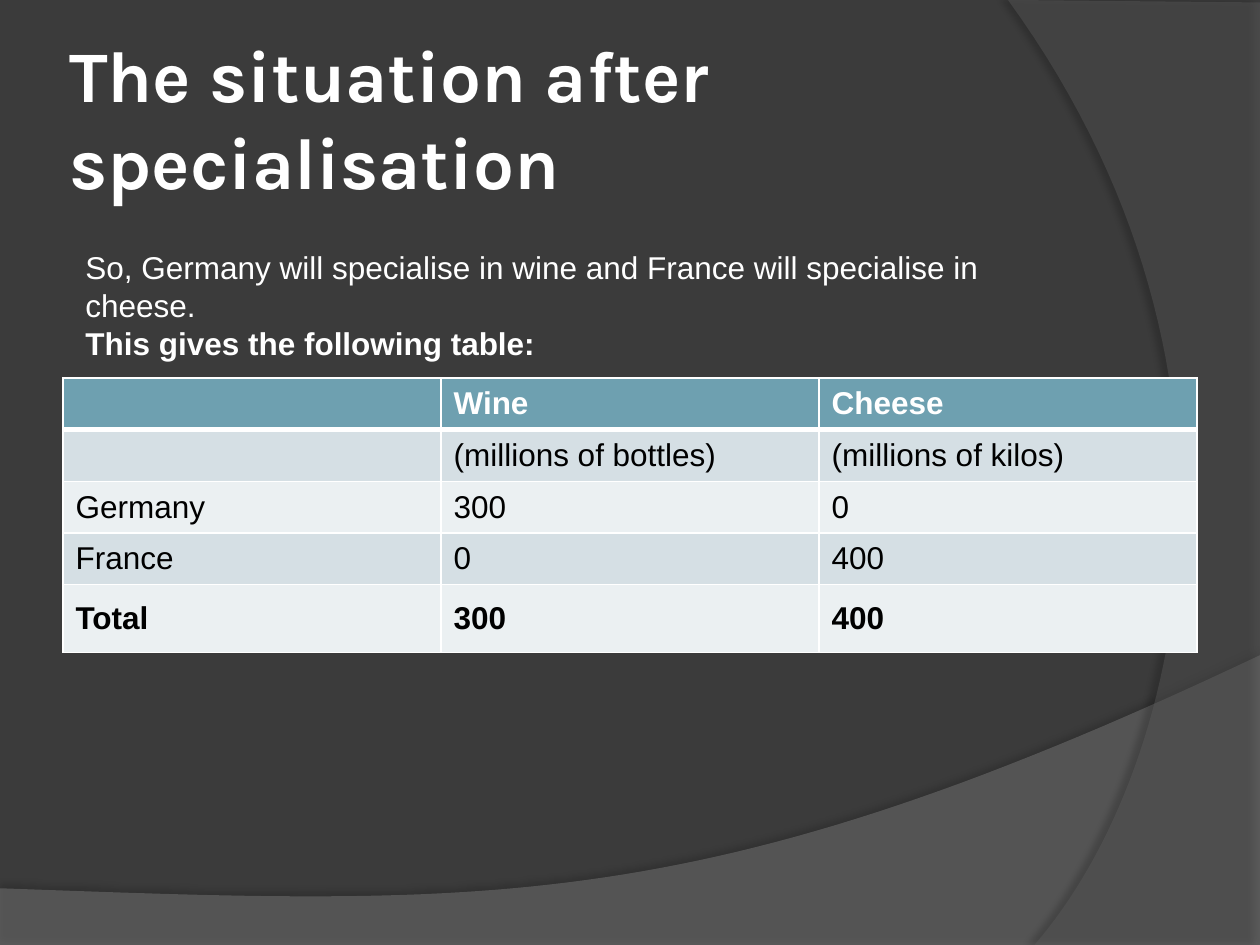
from lxml import etree
from pptx import Presentation
from pptx.dml.color import RGBColor
from pptx.enum.text import MSO_ANCHOR
from pptx.oxml.ns import qn
from pptx.util import Inches, Pt

MIDDLE = MSO_ANCHOR.MIDDLE
TOP = MSO_ANCHOR.TOP
COLORS = {
    "background": "3B3B3B",
    "lower_wave": "7F7F7F",
    "right_wave": "5E5E5E",
    "shadow": "000000",
    "light": "FFFFFF",
    "dark": "000000",
    "header": "6EA0B0",
    "band_odd": "D5DFE4",
    "band_even": "EBF0F2",
}
TRADE_ROWS = [
    ("", "Wine", "Cheese"),
    ("", "(millions of bottles)", "(millions of kilos)"),
    ("Germany", "300", "0"),
    ("France", "0", "400"),
    ("Total", "300", "400"),
]
ROW_HEIGHTS = [0.41, 0.41, 0.41, 0.41, 0.54]
CURVE_STEPS = 60


def rgb(name):
    return RGBColor.from_string(COLORS[name])


def add_color(parent, name, opacity=100):
    color = etree.SubElement(parent, qn("a:srgbClr"), val=COLORS[name])
    if opacity < 100:
        etree.SubElement(color, qn("a:alpha"), val=str(opacity * 1000))


def curve(start, control_1, control_2, end):
    points = []
    for step in range(CURVE_STEPS + 1):
        t = step / CURVE_STEPS
        weights = ((1 - t) ** 3, 3 * t * (1 - t) ** 2, 3 * t * t * (1 - t), t ** 3)
        points.append(tuple(
            sum(weight * value for weight, value in zip(weights, axis))
            for axis in zip(start, control_1, control_2, end)
        ))
    return points


def add_wave(slide, outline, color, opacity, shadow_opacity, distance, direction):
    points = [(Inches(x), Inches(y)) for x, y in outline]
    builder = slide.shapes.build_freeform(*points[0])
    builder.add_line_segments(points[1:], close=True)
    wave = builder.convert_to_shape()
    wave.fill.solid()
    wave.fill.fore_color.rgb = rgb(color)
    fill_color = wave.fill._xPr.find(qn("a:solidFill")).find(qn("a:srgbClr"))
    etree.SubElement(fill_color, qn("a:alpha"), val=str(opacity * 1000))
    wave.line.fill.background()
    wave.shadow.inherit = False
    effects = wave._element.spPr.find(qn("a:effectLst"))
    shadow = etree.SubElement(
        effects, qn("a:outerShdw"), blurRad=str(Pt(4)), dist=str(Pt(distance)),
        dir=str(direction * 60000), algn="ctr", rotWithShape="0",
    )
    add_color(shadow, "shadow", shadow_opacity)


def write(paragraph, text, size=18, font="Arial", color="light", bold=False):
    run = paragraph.add_run()
    run.text = text
    run.font.size = Pt(size)
    run.font.name = font
    run.font.bold = bold
    run.font.color.rgb = rgb(color)


def add_text_frame(slide, left, top, width, height, anchor=TOP, side_inset=0.1):
    frame = slide.shapes.add_textbox(
        Inches(left), Inches(top), Inches(width), Inches(height)
    ).text_frame
    frame.word_wrap = True
    frame.vertical_anchor = anchor
    frame.margin_left = frame.margin_right = Inches(side_inset)
    return frame


def set_borders(cell, row):
    properties = cell._tc.get_or_add_tcPr()
    widths = {"L": 1, "R": 1, "T": 3 if row == 1 else 1, "B": 3 if row == 0 else 1}
    for position, (side, width) in enumerate(widths.items()):
        border = etree.Element(qn(f"a:ln{side}"), w=str(Pt(width)))
        add_color(etree.SubElement(border, qn("a:solidFill")), "light")
        properties.insert(position, border)


def add_trade_table(slide):
    table = slide.shapes.add_table(
        len(TRADE_ROWS), len(TRADE_ROWS[0]), Inches(0.5), Inches(3),
        Inches(9), Inches(sum(ROW_HEIGHTS)),
    ).table
    last = len(TRADE_ROWS) - 1
    for row, (labels, height) in enumerate(zip(TRADE_ROWS, ROW_HEIGHTS)):
        table.rows[row].height = Inches(height)
        band = "header" if row == 0 else "band_odd" if row % 2 else "band_even"
        for column, label in enumerate(labels):
            cell = table.cell(row, column)
            cell.fill.solid()
            cell.fill.fore_color.rgb = rgb(band)
            cell.vertical_anchor = MIDDLE
            set_borders(cell, row)
            if label:
                write(cell.text_frame.paragraphs[0], label,
                      color="dark" if row else "light", bold=row in (0, last))


def main():
    presentation = Presentation()
    presentation.slide_width = Inches(10)
    presentation.slide_height = Inches(7.5)
    slide = presentation.slides.add_slide(presentation.slide_layouts[6])
    slide.background.fill.solid()
    slide.background.fill.fore_color.rgb = rgb("background")

    lower_edge = curve((10, 5.2), (5.59, 7.29), (3.91, 7.19), (0, 7.05))
    add_wave(slide, [(0, 7.51), (10, 7.51)] + lower_edge,
             "lower_wave", 45, 35, 3.5, 270)
    right_edge = curve((8.21, 7.5), (9.35, 6.19), (10.18, 3), (8, 0))
    add_wave(slide, [(10, 0.02), (10, 7.5)] + right_edge,
             "right_wave", 40, 45, 4, 180)

    title = add_text_frame(slide, 0.5, 0.3, 8.17, 1.25, MIDDLE, 0.05)
    write(title.paragraphs[0], "The situation after specialisation",
          size=41.4, font="Karla", bold=True)

    add_trade_table(slide)

    intro = add_text_frame(slide, 0.58, 1.92, 7.55, 0.71)
    write(intro.paragraphs[0],
          "So, Germany will specialise in wine and France will specialise in cheese.")
    write(intro.add_paragraph(), "This gives the following table:", bold=True)

    presentation.save("out.pptx")


if __name__ == "__main__":
    main()
